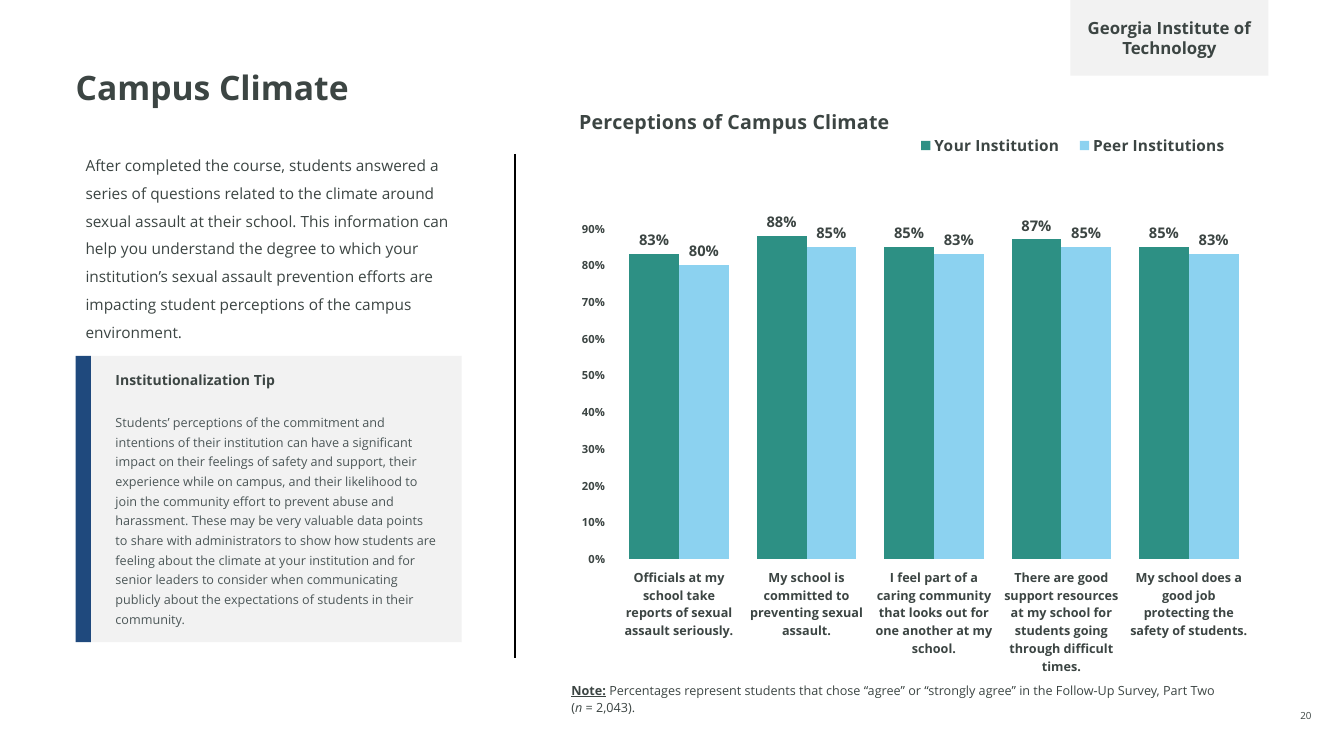
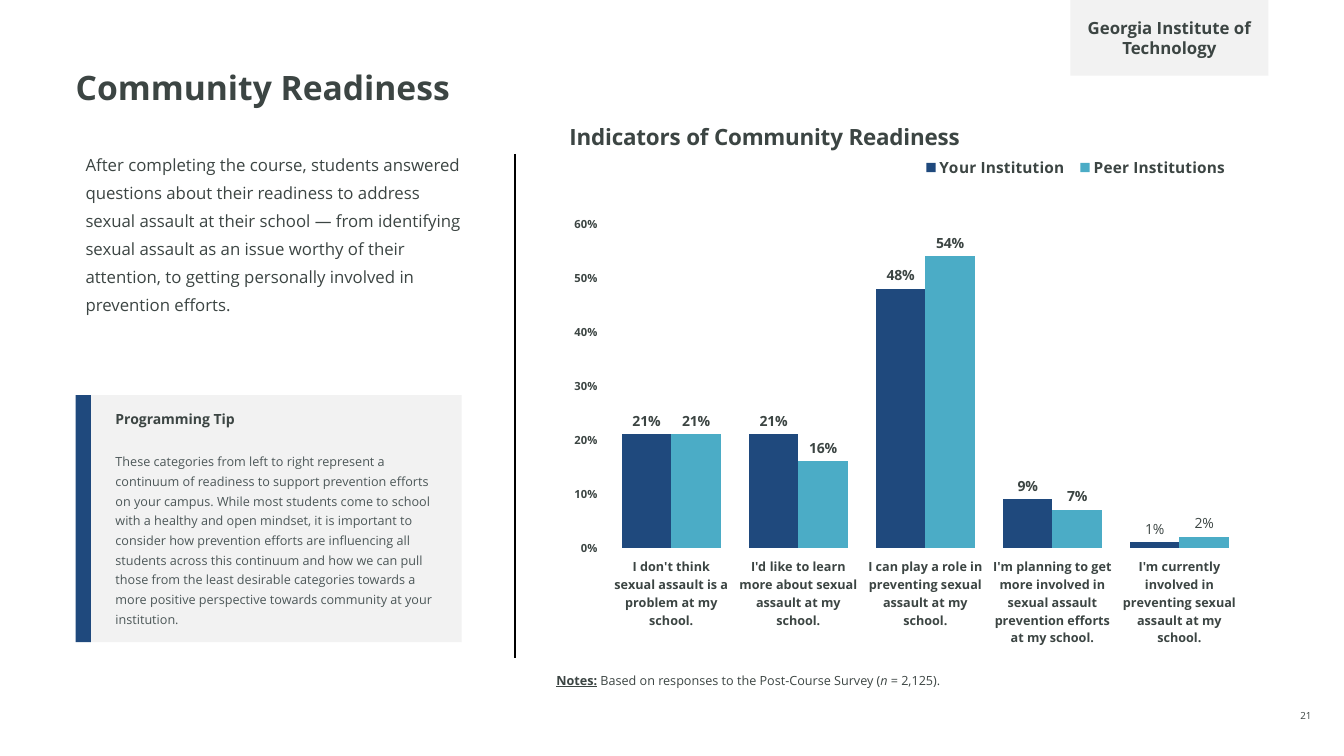
from lxml import etree
from pptx import Presentation
from pptx.chart.data import CategoryChartData
from pptx.dml.color import RGBColor
from pptx.enum.chart import XL_CHART_TYPE as ChartType
from pptx.enum.chart import XL_LABEL_POSITION as LabelPosition
from pptx.enum.chart import XL_LEGEND_POSITION as LegendPosition
from pptx.enum.shapes import MSO_CONNECTOR as Connector
from pptx.enum.shapes import MSO_SHAPE as Shape
from pptx.enum.text import MSO_ANCHOR as Anchor
from pptx.enum.text import MSO_AUTO_SIZE as AutoSize
from pptx.enum.text import PP_ALIGN as Align
from pptx.oxml.ns import qn
from pptx.util import Pt

FONT = "Open Sans"
COLORS = {
    "text": "3C4543", "tip": "4C5758", "panel": "F2F2F2", "navy": "1F497D",
    "line": "000000", "green": "2D9084", "sky": "8CD2F0", "teal": "4BACC6",
}
SCHOOL = "Georgia Institute of Technology"
SERIES = ("Your Institution", "Peer Institutions")
TIP_BOTTOM = 458.7

PAGES = [
    {
        "title": "Campus Climate",
        "number": "20",
        "intro": "After completed the course, students answered a series of questions "
                 "related to the climate around sexual assault at their school. This "
                 "information can help you understand the degree to which your "
                 "institution’s sexual assault prevention efforts are impacting student "
                 "perceptions of the campus environment.",
        "intro_size": 11, "intro_spacing": 1.5, "intro_height": 146,
        "tip_top": 254.2,
        "tip_title": "Institutionalization Tip",
        "tip": "Students’ perceptions of the commitment and intentions of their "
               "institution can have a significant impact on their feelings of safety "
               "and support, their experience while on campus, and their likelihood to "
               "join the community effort to prevent abuse and harassment. These may be "
               "very valuable data points to share with administrators to show how "
               "students are feeling about the climate at your institution and for "
               "senior leaders to consider when communicating publicly about the "
               "expectations of students in their community.",
        "chart_title": "Perceptions of Campus Climate",
        "chart_title_size": 14,
        "chart_area": (408.2, 68.4, 497.5, 417.6),
        "title_at": (0.006, 0.012),
        "legend_at": (0.48, 0.06, 0.48, 0.05),
        "plot_at": (0.063, 0.227, 0.915, 0.565),
        "axis_max": 0.9,
        "label_size": 10.5,
        "categories": [
            "Officials at my school take reports of sexual assault seriously.",
            "My school is committed to preventing sexual assault.",
            "I feel part of a caring community that looks out for one another at my school.",
            "There are good support resources at my school for students going through "
            "difficult times.",
            "My school does a good job protecting the safety of students.",
        ],
        "values": [(0.83, 0.88, 0.85, 0.87, 0.85), (0.8, 0.85, 0.83, 0.85, 0.83)],
        "series_colors": ("green", "sky"),
        "light_points": [],
        "note_area": (408.2, 478.8, 466.6, 31.7),
        "note": ("Note:", " Percentages represent students that chose “agree” or “strongly "
                 "agree” in the Follow-Up Survey, Part Two (", "n", " = 2,043)."),
    },
    {
        "title": "Community Readiness",
        "number": "21",
        "intro": "After completing the course, students answered questions about their "
                 "readiness to address sexual assault at their school — from identifying "
                 "sexual assault as an issue worthy of their attention, to getting "
                 "personally involved in prevention efforts.",
        "intro_size": 12, "intro_spacing": Pt(20), "intro_height": 127,
        "tip_top": 282.2,
        "tip_title": "Programming Tip",
        "tip": "These categories from left to right represent a continuum of readiness to "
               "support prevention efforts on your campus. While most students come to "
               "school with a healthy and open mindset, it is important to consider how "
               "prevention efforts are influencing all students across this continuum and "
               "how we can pull those from the least desirable categories towards a more "
               "positive perspective towards community at your institution.",
        "chart_title": "Indicators of Community Readiness",
        "chart_title_size": 16,
        "chart_area": (400.3, 78.5, 497.5, 391.7),
        "title_at": (0.007, 0.011),
        "legend_at": (0.51, 0.08, 0.46, 0.05),
        "plot_at": (0.068, 0.208, 0.912, 0.591),
        "axis_max": 0.6,
        "label_size": 10,
        "categories": [
            "I don't think sexual assault is a problem at my school.",
            "I'd like to learn more about sexual assault at my school.",
            "I can play a role in preventing sexual assault at my school.",
            "I'm planning to get more involved in sexual assault prevention efforts at "
            "my school.",
            "I'm currently involved in preventing sexual assault at my school.",
        ],
        "values": [(0.21, 0.21, 0.48, 0.09, 0.01), (0.21, 0.16, 0.54, 0.07, 0.02)],
        "series_colors": ("navy", "teal"),
        "light_points": [4],
        "note_area": (397.4, 477.4, 497.5, 13.7),
        "note": ("Notes:", " Based on responses to the Post-Course Survey (", "n",
                 " = 2,125)."),
    },
]


def style_font(font, size, bold=False, color="text"):
    font.name = FONT
    font.size = Pt(size)
    font.bold = bold
    font.color.rgb = RGBColor.from_string(COLORS[color])


def set_layout(element, index, fractions, inner=False):
    """Place a chart part at fractions (x, y, w, h) of the chart area."""
    for old in element.findall(qn("c:layout")):
        element.remove(old)
    layout = etree.Element(qn("c:layout"))
    manual = etree.SubElement(layout, qn("c:manualLayout"))
    settings = [("layoutTarget", "inner")] if inner else []
    settings += [("xMode", "edge"), ("yMode", "edge"), *zip("xywh", fractions)]
    for name, value in settings:
        etree.SubElement(manual, qn(f"c:{name}")).set("val", str(value))
    element.insert(index, layout)


deck = Presentation()
deck.slide_width, deck.slide_height = Pt(960), Pt(540)

for content in PAGES:
    page = deck.slides.add_slide(deck.slide_layouts[5])
    shapes = page.shapes

    # Title
    title = shapes.title
    title.left, title.top, title.width, title.height = Pt(54), Pt(51), Pt(852), Pt(50)
    frame = title.text_frame
    frame.text = content["title"]
    frame.auto_size = AutoSize.NONE
    frame.vertical_anchor = Anchor.TOP
    frame.margin_left = frame.margin_top = frame.margin_right = frame.margin_bottom = 0
    para = frame.paragraphs[0]
    para.alignment = Align.LEFT
    para.line_spacing = 0.9
    style_font(para.font, 24, True)

    # Chart
    data = CategoryChartData(number_format="0%")
    data.categories = content["categories"]
    for name, values in zip(SERIES, content["values"]):
        data.add_series(name, values)
    chart_area = [Pt(length) for length in content["chart_area"]]
    chart = shapes.add_chart(ChartType.COLUMN_CLUSTERED, *chart_area, data).chart
    style_font(chart.font, 8)

    chart.has_title = True
    heading = chart.chart_title
    heading.text_frame.text = content["chart_title"]
    style_font(heading.text_frame.paragraphs[0].font, content["chart_title_size"], True)
    set_layout(heading._element, 1, content["title_at"])

    chart.has_legend = True
    legend = chart.legend
    legend.position = LegendPosition.TOP
    legend.include_in_layout = False
    style_font(legend.font, 11, True)
    set_layout(legend._element, 1, content["legend_at"])
    set_layout(chart._chartSpace.chart.plotArea, 0, content["plot_at"], inner=True)

    for axis, size in ((chart.category_axis, 9), (chart.value_axis, 8)):
        axis.has_major_gridlines = False
        axis.format.line.fill.background()
        style_font(axis.tick_labels.font, size, True)
    scale = chart.value_axis
    scale.minimum_scale, scale.maximum_scale = 0, content["axis_max"]
    scale.major_unit = 0.1
    scale.tick_labels.number_format = "0%"
    scale.tick_labels.number_format_is_linked = False

    plot = chart.plots[0]
    plot.gap_width = 56
    plot.overlap = 0
    plot.vary_by_categories = False
    for series, color in zip(plot.series, content["series_colors"]):
        series.format.fill.solid()
        series.format.fill.fore_color.rgb = RGBColor.from_string(COLORS[color])
        labels = series.data_labels
        labels.show_value = True
        labels.position = LabelPosition.OUTSIDE_END
        labels.number_format = "0%"
        labels.number_format_is_linked = False
        style_font(labels.font, content["label_size"], True)
        for index in content["light_points"]:
            label = series.points[index].data_label
            style_font(label.font, content["label_size"])
            label.position = LabelPosition.OUTSIDE_END

    # Divider
    divider = shapes.add_connector(Connector.STRAIGHT, Pt(368), Pt(110), Pt(368), Pt(470))
    divider.line.color.rgb = RGBColor.from_string(COLORS["line"])
    divider.line.width = Pt(1)
    etree.SubElement(divider._element.spPr, qn("a:effectLst"))

    # Introduction
    intro = shapes.add_textbox(Pt(54), Pt(101.5), Pt(291.6), Pt(content["intro_height"]))
    frame = intro.text_frame
    frame.word_wrap = True
    frame.auto_size = AutoSize.SHAPE_TO_FIT_TEXT
    frame.text = content["intro"]
    para = frame.paragraphs[0]
    para.line_spacing = content["intro_spacing"]
    para.space_after = Pt(2)
    style_font(para.font, content["intro_size"])

    # Tip panel, its side bar and the school tag
    tip_top = content["tip_top"]
    tip_height = TIP_BOTTOM - tip_top
    rectangles = []
    for left, top, width, height, color in (
        (64.5, tip_top, 265.3, tip_height, "panel"),
        (54, tip_top, 11, tip_height, "navy"),
        (764.6, 0, 141.4, 54, "panel"),
    ):
        box = shapes.add_shape(Shape.RECTANGLE, Pt(left), Pt(top), Pt(width), Pt(height))
        box.shadow.inherit = False
        box.fill.solid()
        box.fill.fore_color.rgb = RGBColor.from_string(COLORS[color])
        box.line.fill.background()
        rectangles.append(box)
    tip_panel, _, school_tag = rectangles

    frame = tip_panel.text_frame
    frame.vertical_anchor = Anchor.MIDDLE
    frame.margin_left = frame.margin_right = Pt(18)
    frame.margin_top = frame.margin_bottom = 0
    frame.text = content["tip_title"] + "\n" + content["tip"]
    tip_title, tip_text = frame.paragraphs
    tip_title.alignment = tip_text.alignment = Align.LEFT
    tip_title.line_spacing, tip_title.space_after = Pt(12), Pt(16)
    tip_text.line_spacing, tip_text.space_after = 1.3, Pt(2)
    style_font(tip_title.font, 10, True)
    style_font(tip_text.font, 9, color="tip")

    frame = school_tag.text_frame
    frame.vertical_anchor = Anchor.MIDDLE
    frame.margin_top = frame.margin_bottom = 0
    frame.text = SCHOOL
    frame.paragraphs[0].alignment = Align.CENTER
    style_font(frame.paragraphs[0].font, 12, True)

    # Note and page number
    note = shapes.add_textbox(*[Pt(length) for length in content["note_area"]])
    number = shapes.add_textbox(Pt(914.4), Pt(504.7), Pt(36.7), Pt(10.8))
    for box in (note, number):
        frame = box.text_frame
        frame.word_wrap = True
        frame.vertical_anchor = Anchor.BOTTOM
        frame.margin_left = frame.margin_top = frame.margin_right = frame.margin_bottom = 0

    para = note.text_frame.paragraphs[0]
    para.line_spacing = Pt(12)
    para.space_after = Pt(2)
    style_font(para.font, 9)
    lead, _, symbol, _ = spans = [para.add_run() for _ in content["note"]]
    for span, text in zip(spans, content["note"]):
        span.text = text
    lead.font.bold = lead.font.underline = True
    symbol.font.italic = True

    para = number.text_frame.paragraphs[0]
    para.text = content["number"]
    para.alignment = Align.CENTER
    style_font(para.font, 7)

deck.save("out.pptx")
